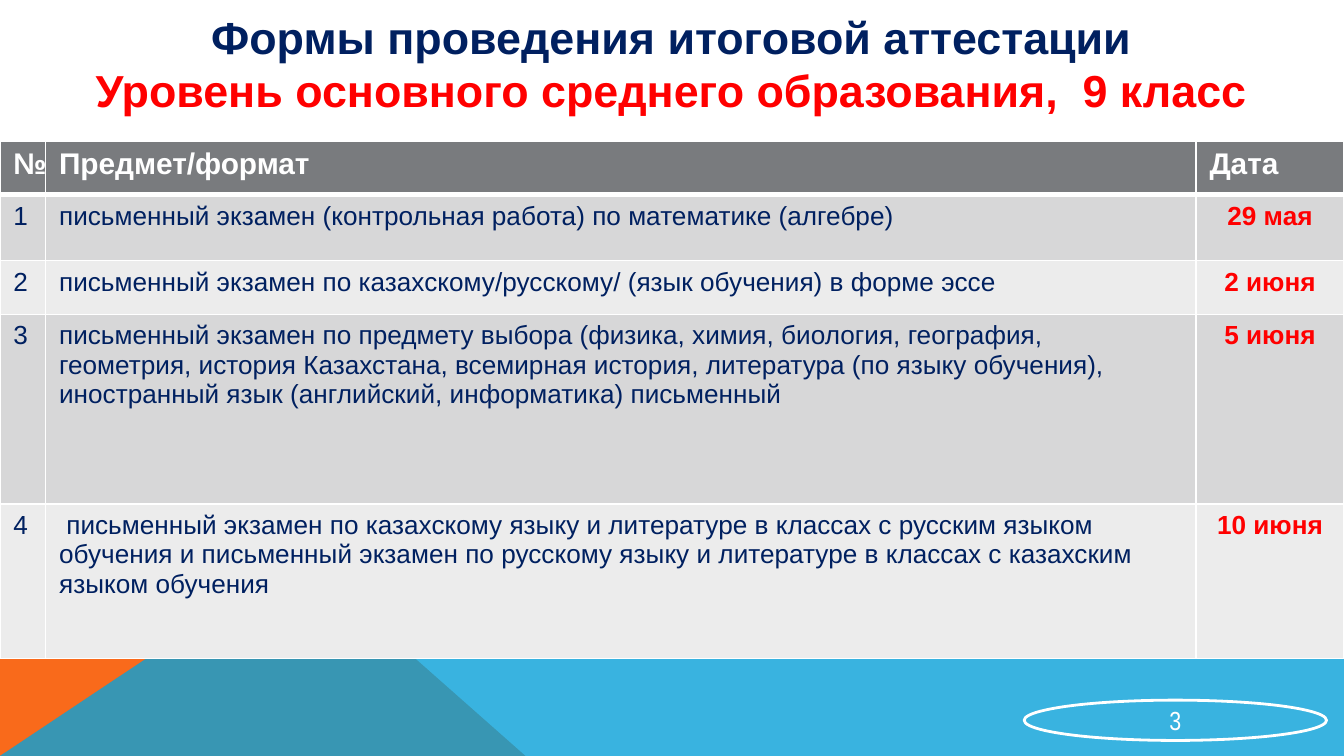
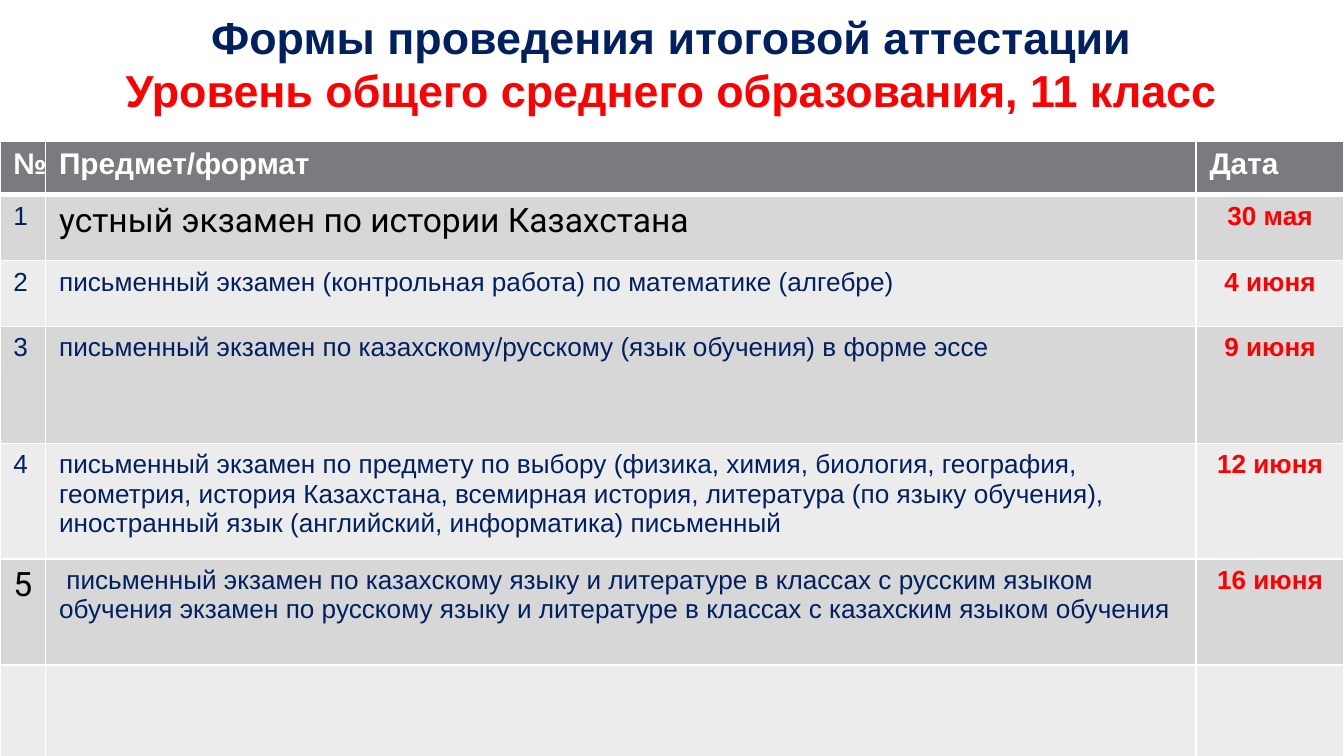
import typing
from dataclasses import dataclass

import pptx
import pptx.dml.color
import pptx.enum.shapes
import pptx.enum.text
import pptx.oxml
import pptx.oxml.ns
import pptx.util
from lxml import etree

SCALE = 4572
WIDE, HIGH = 2000, 1125
BAND_TOP = 828
NAVY, RED, WHITE, BLACK = "002060", "FF0000", "FFFFFF", "000000"
HEAD, DARK, LIGHT = "797B7E", "D7D7D8", "ECECEC"
ORANGE, BLUE = "F96A1B", "08A1D9"
COLS = (68, 1712, 220)
HEAD_TALL = 80
LEFT = pptx.enum.text.PP_ALIGN.LEFT
MID = pptx.enum.text.PP_ALIGN.CENTER


@dataclass(frozen=True)
class Band:
    points: tuple[tuple[int, int], ...]
    color: str
    alpha: int = 100


@dataclass(frozen=True)
class Row:
    tall: int
    num: str = ""
    topic: str = ""
    date: str = ""
    large: int = -1


@dataclass(frozen=True)
class Page:
    level: str
    rows: tuple[Row, ...]
    number: str = ""


BANDS = (
    Band(((0, HIGH), (0, BAND_TOP), (446, BAND_TOP), (782, HIGH)), ORANGE),
    Band(((0, HIGH), (446, BAND_TOP), (WIDE, BAND_TOP), (WIDE, HIGH)), BLUE, 80),
)

PAGES = (
    Page(
        "Уровень основного среднего образования,  9 класс ",
        (
            Row(98, "1", "письменный экзамен (контрольная работа) по математике (алгебре)", "29 мая"),
            Row(80, "2", "письменный экзамен по казахскому/русскому/ (язык обучения) в форме эссе", "2 июня"),
            Row(
                282,
                "3",
                "письменный экзамен по предмету выбора (физика, химия, биология, география, "
                "геометрия, история Казахстана, всемирная история, литература (по языку обучения), "
                "иностранный язык (английский, информатика) письменный",
                "5 июня",
            ),
            Row(
                230,
                "4",
                " письменный экзамен по казахскому языку и литературе в классах с русским языком "
                "обучения и письменный экзамен по русскому языку и литературе в классах с казахским "
                "языком обучения",
                "10 июня",
            ),
        ),
        "3",
    ),
    Page(
        "Уровень общего среднего образования, 11 класс ",
        (
            Row(98, "1", "устный экзамен по истории Казахстана", "30 мая", large=1),
            Row(98, "2", "письменный экзамен (контрольная работа) по математике (алгебре)", "4 июня"),
            Row(174, "3", "письменный экзамен по казахскому/русскому (язык обучения) в форме эссе", "9 июня"),
            Row(
                172,
                "4",
                "письменный экзамен по предмету по выбору (физика, химия, биология, география, "
                "геометрия, история Казахстана, всемирная история, литература (по языку обучения), "
                "иностранный язык (английский, информатика) письменный",
                "12 июня",
            ),
            Row(
                158,
                "5",
                " письменный экзамен по казахскому языку и литературе в классах с русским языком "
                "обучения экзамен по русскому языку и литературе в классах с казахским языком обучения",
                "16 июня",
                large=0,
            ),
            Row(230),
        ),
    ),
)


def px(count: int) -> pptx.util.Emu:
    return pptx.util.Emu(count * SCALE)


def tint(code: str) -> pptx.dml.color.RGBColor:
    return pptx.dml.color.RGBColor.from_string(code)


def paint(fill: typing.Any, code: str) -> None:
    fill.solid()
    fill.fore_color.rgb = tint(code)


def write(
    para: typing.Any,
    text: str,
    *,
    size: int = 14,
    color: str = NAVY,
    bold: bool = False,
    font: str = "Arial",
    align: typing.Any = LEFT,
    pitch: float = 0,
) -> None:
    para.alignment = align
    if pitch:
        para.line_spacing = pptx.util.Pt(pitch)
    run = para.add_run()
    run.text = text
    run.font.size = pptx.util.Pt(size)
    run.font.name = font
    run.font.bold = bold
    run.font.color.rgb = tint(color)


def inset(frame: typing.Any, side: int, edge: int) -> None:
    frame.margin_left = frame.margin_right = px(side)
    frame.margin_top = frame.margin_bottom = px(edge)


def add_bands(slide: typing.Any) -> None:
    tree = slide.slide_layout.shapes.element
    for spot, band in enumerate(BANDS):
        pen = slide.shapes.build_freeform(*band.points[0], scale=SCALE)
        pen.add_line_segments(band.points[1:], close=True)
        shape = pen.convert_to_shape()
        shape.shadow.inherit = False
        shape.line.fill.background()
        paint(shape.fill, band.color)
        if band.alpha < 100:
            code = shape.element.find(".//" + pptx.oxml.ns.qn("a:srgbClr"))
            alpha = etree.SubElement(code, pptx.oxml.ns.qn("a:alpha"))
            alpha.set("val", str(band.alpha * 1000))
        shape.element.nvSpPr.cNvPr.id = 20 + spot
        tree.insert(2 + spot, shape.element)


def add_title(slide: typing.Any, level: str) -> None:
    title = slide.shapes.title
    title.left, title.top, title.width, title.height = map(px, (76, 6, 1864, 176))
    frame = title.text_frame
    frame.word_wrap = True
    frame.auto_size = pptx.enum.text.MSO_AUTO_SIZE.NONE
    frame.vertical_anchor = pptx.enum.text.MSO_ANCHOR.TOP
    inset(frame, 14, 8)
    look = dict(size=24, bold=True, align=MID, pitch=28.8)
    write(frame.paragraphs[0], "Формы проведения итоговой аттестации ", **look)
    write(frame.add_paragraph(), level, color=RED, **look)


def add_badge(slide: typing.Any, number: str) -> None:
    oval = pptx.enum.shapes.MSO_SHAPE.OVAL
    badge = slide.shapes.add_shape(oval, px(1524), px(1042), px(450), px(60))
    badge.shadow.inherit = False
    badge.fill.background()
    badge.line.color.rgb = tint(WHITE)
    badge.line.width = pptx.util.Pt(1.5)
    frame = badge.text_frame
    frame.vertical_anchor = pptx.enum.text.MSO_ANCHOR.MIDDLE
    inset(frame, 2, 2)
    write(frame.paragraphs[0], number, color=WHITE, font="Arial Narrow", align=MID)


def style_cell(cell: typing.Any, code: str, top: int = 1, base: int = 1) -> None:
    props = cell._tc.get_or_add_tcPr()
    for side, width in (("L", 1), ("R", 1), ("T", top), ("B", base)):
        line = etree.SubElement(props, pptx.oxml.ns.qn("a:ln" + side))
        line.set("w", str(pptx.util.Pt(width)))
        fill = etree.SubElement(line, pptx.oxml.ns.qn("a:solidFill"))
        etree.SubElement(fill, pptx.oxml.ns.qn("a:srgbClr")).set("val", WHITE)
    paint(cell.fill, code)


def add_grid(slide: typing.Any, rows: tuple[Row, ...]) -> None:
    talls = [HEAD_TALL] + [row.tall for row in rows]
    frame = slide.shapes.add_table(
        len(talls), len(COLS), px(0), px(210), px(WIDE), px(sum(talls))
    )
    grid = frame.table
    grid.horz_banding = False
    for col, width in zip(grid.columns, COLS):
        col.width = px(width)
    for line, tall in zip(grid.rows, talls):
        line.height = px(tall)
    for spot, text in enumerate(("№", "Предмет/формат", "Дата")):
        cell = grid.cell(0, spot)
        style_cell(cell, HEAD, base=3)
        write(cell.text_frame.paragraphs[0], text, size=16, color=WHITE, bold=True)
    for rank, row in enumerate(rows, 1):
        for spot, text in enumerate((row.num, row.topic, row.date)):
            cell = grid.cell(rank, spot)
            style_cell(cell, DARK if rank % 2 else LIGHT, top=3 if rank == 1 else 1)
            if not text:
                continue
            look: dict[str, typing.Any] = {}
            if spot == 2:
                look = dict(color=RED, bold=True, align=MID)
            elif spot == row.large:
                look = dict(size=18, color=BLACK, font="Roboto")
            write(cell.text_frame.paragraphs[0], text, **look)


def main() -> None:
    deck = pptx.Presentation()
    deck.slide_width, deck.slide_height = px(WIDE), px(HIGH)
    layout = deck.slide_layouts[5]
    for rank, page in enumerate(PAGES):
        slide = deck.slides.add_slide(layout)
        if rank == 0:
            add_bands(slide)
        add_title(slide, page.level)
        if page.number:
            add_badge(slide, page.number)
        add_grid(slide, page.rows)
    deck.save("out.pptx")


if __name__ == "__main__":
    main()
